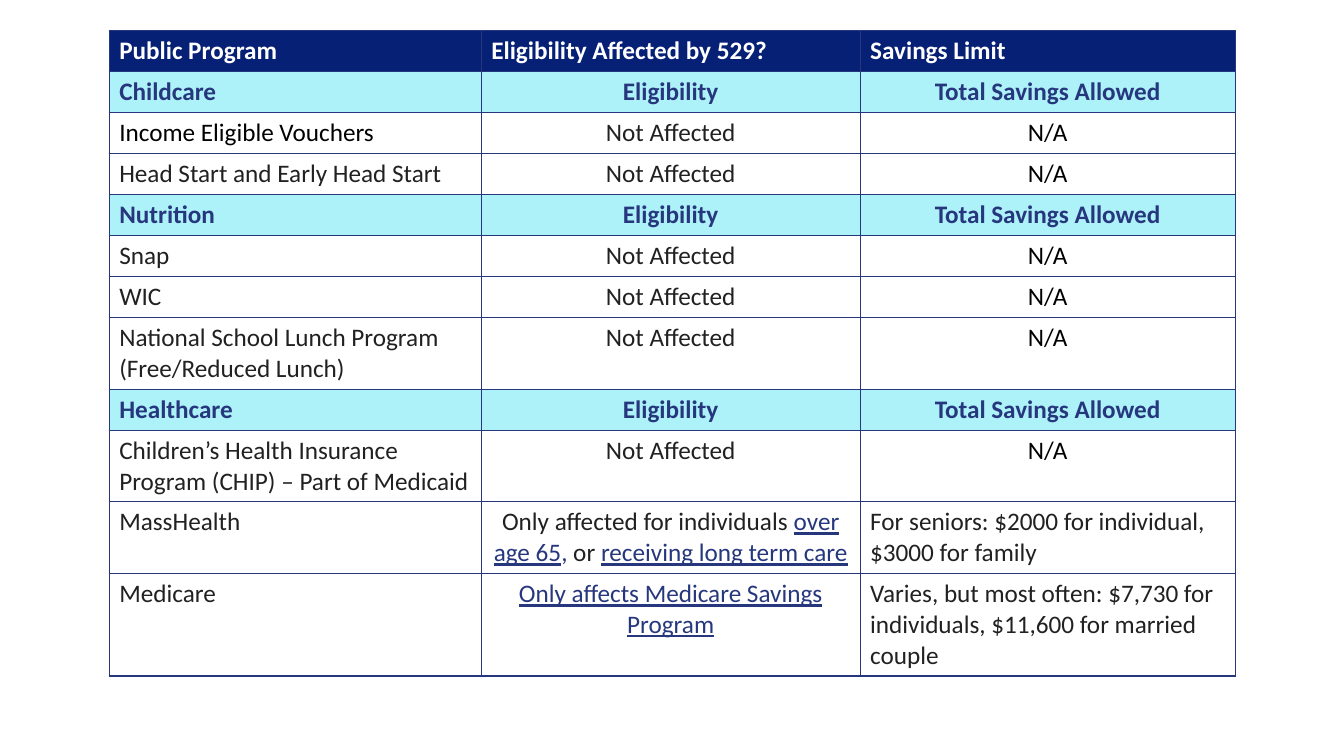
from lxml.etree import SubElement
from pptx import Presentation
from pptx.dml.color import RGBColor as RGB
from pptx.enum.text import PP_ALIGN as Align
from pptx.oxml.ns import qn
from pptx.util import Pt

COLORS = {
    "header": "052075",
    "section": "ADF2F9",
    "body": "FFFFFF",
    "navy": "26377E",
    "dark": "212121",
    "black": "000000",
    "white": "FFFFFF",
}
COLUMN_WIDTHS = (265.8, 270.6, 268)
ROW_HEIGHT = 29.3


def section(name):
    return "section", [name, "Eligibility", "Total Savings Allowed"]


def unaffected(program):
    return "body", [program, "Not Affected", [("N/A", "black", False)]]


ROWS = [
    ("header", ["Public Program", "Eligibility Affected by 529?", "Savings Limit"]),
    section("Childcare"),
    unaffected([("Income Eligible Vouchers", "black", False)]),
    unaffected("Head Start and Early Head Start"),
    section("Nutrition"),
    unaffected("Snap"),
    unaffected("WIC"),
    unaffected("National School Lunch Program (Free/Reduced Lunch)"),
    section("Healthcare"),
    unaffected("Children’s Health Insurance Program (CHIP) – Part of Medicaid"),
    ("body", [
        "MassHealth",
        [
            ("Only affected for individuals ", "dark", False),
            ("over age 65", "navy", True),
            (", ", "navy", False),
            ("or ", "dark", False),
            ("receiving long term care", "navy", True),
        ],
        "For seniors: $2000 for individual, $3000 for family",
    ]),
    ("body", [
        "Medicare",
        [("Only affects Medicare Savings Program", "navy", True)],
        "Varies, but most often: $7,730 for individuals, $11,600 for married couple",
    ]),
]
TEXT_COLORS = {"header": "white", "section": "navy", "body": "dark"}


def add_borders(cell):
    tcPr = cell._tc.get_or_add_tcPr()
    for side in ("lnL", "lnR", "lnT", "lnB"):
        ln = SubElement(tcPr, qn(f"a:{side}"), w=str(Pt(1)))
        fill = SubElement(ln, qn("a:solidFill"))
        SubElement(fill, qn("a:srgbClr"), val=COLORS["navy"])


def write_runs(p, content, kind):
    if isinstance(content, str):
        content = [(content, TEXT_COLORS[kind], False)]
    for text, color, underline in content:
        r = p.add_run()
        r.text = text
        r.font.name = "Calibri"
        r.font.size = Pt(18)
        r.font.bold = kind != "body"
        r.font.underline = underline
        r.font.color.rgb = RGB.from_string(COLORS[color])


def is_centred(kind, column, content):
    if kind == "header" or column == 0:
        return False
    return kind == "section" or column == 1 or not isinstance(content, str)


def fill_cell(cell, kind, column, content):
    add_borders(cell)
    cell.fill.solid()
    cell.fill.fore_color.rgb = RGB.from_string(COLORS[kind])
    p = cell.text_frame.paragraphs[0]
    p.alignment = Align.CENTER if is_centred(kind, column, content) else Align.LEFT
    write_runs(p, content, kind)


def add_program_table(s):
    frame = s.shapes.add_table(
        len(ROWS), len(COLUMN_WIDTHS), Pt(78), Pt(21.9),
        Pt(sum(COLUMN_WIDTHS)), Pt(ROW_HEIGHT * len(ROWS)))
    table = frame.table
    table.horz_banding = False
    for column, width in zip(table.columns, COLUMN_WIDTHS):
        column.width = Pt(width)
    for i, (kind, contents) in enumerate(ROWS):
        table.rows[i].height = Pt(ROW_HEIGHT)
        for j, content in enumerate(contents):
            fill_cell(table.cell(i, j), kind, j, content)


def main():
    prs = Presentation()
    prs.slide_width, prs.slide_height = Pt(960), Pt(540)
    s = prs.slides.add_slide(prs.slide_layouts[6])
    add_program_table(s)
    prs.save("out.pptx")


if __name__ == "__main__":
    main()
